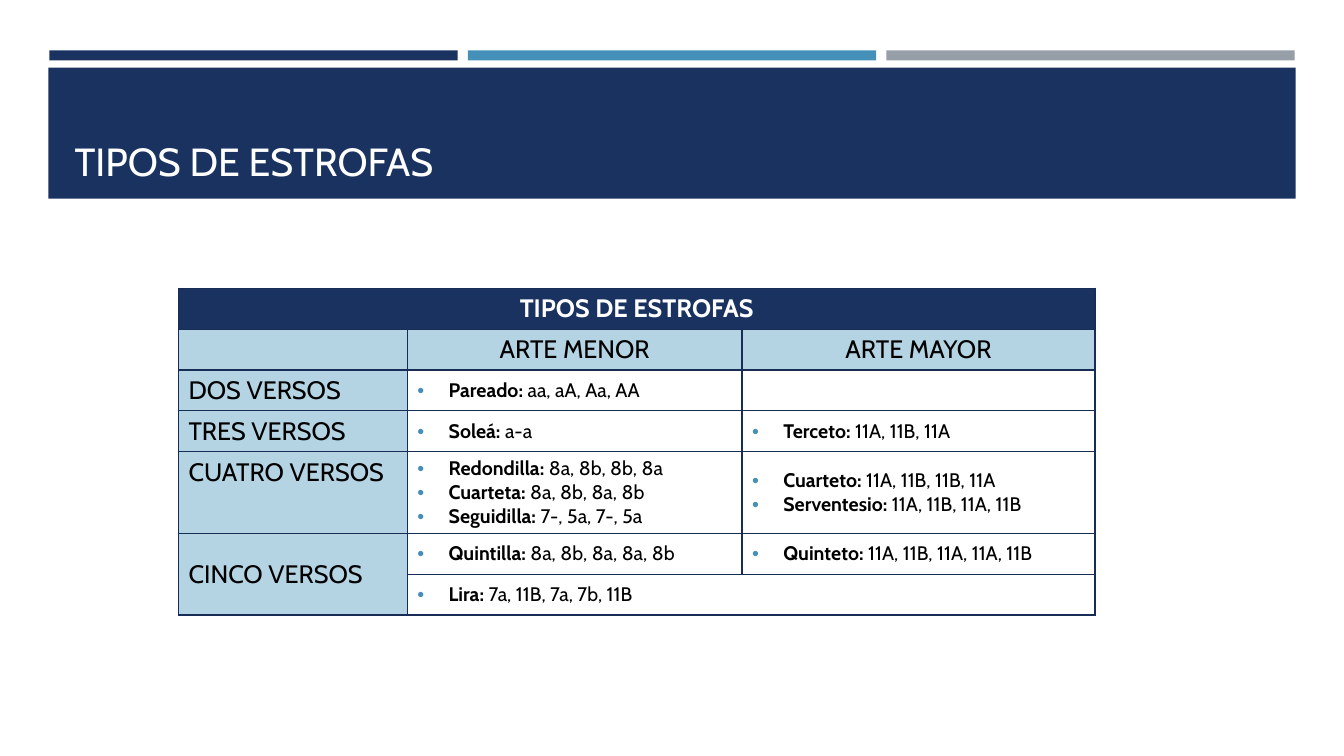
from dataclasses import dataclass

from lxml import etree
from pptx import Presentation
from pptx.dml.color import RGBColor
from pptx.enum import shapes, text
from pptx.oxml.ns import qn
from pptx.slide import Slide
from pptx.table import _Cell
from pptx.util import Inches, Pt


@dataclass(frozen=True)
class Theme:
    font: str = "Cabin"
    navy: str = "1A3260"
    blue: str = "4590B8"
    grey: str = "969FA7"
    pale: str = "B4D3E3"
    edge: str = "172D56"
    white: str = "FFFFFF"
    black: str = "000000"
    title: int = 28
    label: int = 18
    item: int = 14


@dataclass(frozen=True)
class Band:
    left: float
    top: float
    width: float
    height: float
    color: str


@dataclass(frozen=True)
class Stanza:
    name: str
    pattern: str


@dataclass(frozen=True)
class Entry:
    """A table cell: a centred or left label, or a list of stanzas."""
    row: int
    col: int
    label: str = ""
    stanzas: tuple[Stanza, ...] = ()
    fill: str = ""
    color: str = "000000"
    bold: bool = False
    centered: bool = False
    middle: bool = False
    row_span: int = 1
    col_span: int = 1


T = Theme()

BANDS = [
    *(Band(0.49 + 4.15 * i, 0.5, 4.05, 0.1, color)
      for i, color in enumerate((T.navy, T.blue, T.grey))),
    Band(0.48, 0.67, 12.37, 1.3, T.navy),
]

TABLE_LEFT, TABLE_TOP, TABLE_HEIGHT = 1.77, 2.86, 3.24
COLUMN_WIDTHS = (2.27, 3.32, 3.5)
ROW_UNITS = (1, 1, 1, 1, 2, 1, 1)


def heading(col: int, label: str) -> Entry:
    return Entry(1, col, label, fill=T.pale, centered=True)


def verses(row: int, label: str, row_span: int = 1) -> Entry:
    return Entry(row, 0, label, fill=T.pale, row_span=row_span, middle=row_span > 1)


def forms(row: int, col: int, *stanzas: Stanza, col_span: int = 1) -> Entry:
    return Entry(row, col, stanzas=stanzas, middle=True, col_span=col_span)


ENTRIES = [
    Entry(0, 0, "TIPOS DE ESTROFAS", fill=T.navy, color=T.white, bold=True,
          centered=True, col_span=3),
    heading(0, ""),
    heading(1, "ARTE MENOR"),
    heading(2, "ARTE MAYOR"),
    verses(2, "DOS VERSOS"),
    forms(2, 1, Stanza("Pareado:", "aa, aA, Aa, AA")),
    forms(2, 2),
    verses(3, "TRES VERSOS"),
    forms(3, 1, Stanza("Soleá:", "a-a")),
    forms(3, 2, Stanza("Terceto:", "11A, 11B, 11A")),
    verses(4, "CUATRO VERSOS"),
    forms(4, 1, Stanza("Redondilla:", "8a, 8b, 8b, 8a"),
          Stanza("Cuarteta:", "8a, 8b, 8a, 8b"),
          Stanza("Seguidilla:", "7-, 5a, 7-, 5a")),
    forms(4, 2, Stanza("Cuarteto:", "11A, 11B, 11B, 11A"),
          Stanza("Serventesio:", "11A, 11B, 11A, 11B")),
    verses(5, "CINCO VERSOS", row_span=2),
    forms(5, 1, Stanza("Quintilla:", "8a, 8b, 8a, 8a, 8b")),
    forms(5, 2, Stanza("Quinteto:", "11A, 11B, 11A, 11A, 11B")),
    forms(6, 1, Stanza("Lira:", "7a, 11B, 7a, 7b, 11B"), col_span=2),
]


def rgb(color: str) -> RGBColor:
    return RGBColor.from_string(color)


def add_run(p: text.PP_ALIGN, content: str, size: int, color: str, bold: bool = False) -> None:
    r = p.add_run()
    r.text = content
    r.font.name, r.font.size, r.font.bold = T.font, Pt(size), bold
    r.font.color.rgb = rgb(color)


def add_band(slide: Slide, band: Band) -> None:
    sp = slide.shapes.add_shape(
        shapes.MSO_SHAPE.RECTANGLE, Inches(band.left), Inches(band.top),
        Inches(band.width), Inches(band.height))
    sp.shadow.inherit = False
    sp.fill.solid()
    sp.fill.fore_color.rgb = rgb(band.color)
    sp.line.fill.background()


def add_title(slide: Slide, content: str) -> None:
    sp = slide.shapes.title
    sp.left, sp.top, sp.width, sp.height = map(Inches, (0.64, 0.77, 12.06, 1.11))
    tf = sp.text_frame
    tf.auto_size = text.MSO_AUTO_SIZE.NONE
    tf.vertical_anchor = text.MSO_ANCHOR.BOTTOM
    p = tf.paragraphs[0]
    p.alignment = text.PP_ALIGN.LEFT
    add_run(p, content, T.title, T.white)
    slide.shapes._spTree.append(sp._element)  # in front of the bands


def set_borders(cell: _Cell) -> None:
    """Outline the cell; lines must come before the fill in tcPr."""
    tc_pr = cell._tc.get_or_add_tcPr()
    for i, side in enumerate(("lnL", "lnR", "lnT", "lnB")):
        ln = etree.Element(qn(f"a:{side}"), w=str(Pt(1)))
        fill = etree.SubElement(ln, qn("a:solidFill"))
        etree.SubElement(fill, qn("a:srgbClr"), val=T.edge)
        tc_pr.insert(i, ln)


def set_bullet(p: text.PP_ALIGN) -> None:
    p_pr = p._p.get_or_add_pPr()
    p_pr.set("marL", str(Inches(0.31)))
    p_pr.set("indent", str(-Inches(0.31)))
    color = etree.SubElement(p_pr, qn("a:buClr"))
    etree.SubElement(color, qn("a:srgbClr"), val=T.blue)
    etree.SubElement(p_pr, qn("a:buFont"), typeface="Arial")
    etree.SubElement(p_pr, qn("a:buChar"), char="•")


def fill_cell(cell: _Cell, entry: Entry) -> None:
    if entry.fill:
        cell.fill.solid()
        cell.fill.fore_color.rgb = rgb(entry.fill)
    cell.vertical_anchor = text.MSO_ANCHOR.MIDDLE if entry.middle else text.MSO_ANCHOR.TOP
    tf = cell.text_frame
    p = tf.paragraphs[0]
    if entry.label:
        p.alignment = text.PP_ALIGN.CENTER if entry.centered else text.PP_ALIGN.LEFT
        add_run(p, entry.label, T.label, entry.color, entry.bold)
    for i, stanza in enumerate(entry.stanzas):
        p = tf.add_paragraph() if i else p
        set_bullet(p)
        add_run(p, stanza.name, T.item, T.black, bold=True)
        add_run(p, f" {stanza.pattern}", T.item, T.black)


def add_stanza_table(slide: Slide) -> None:
    table = slide.shapes.add_table(
        len(ROW_UNITS), len(COLUMN_WIDTHS), Inches(TABLE_LEFT), Inches(TABLE_TOP),
        Inches(sum(COLUMN_WIDTHS)), Inches(TABLE_HEIGHT)).table
    table.first_row = table.horz_banding = False
    for column, width in zip(table.columns, COLUMN_WIDTHS):
        column.width = Inches(width)
    for row, units in zip(table.rows, ROW_UNITS):
        row.height = Inches(TABLE_HEIGHT * units / sum(ROW_UNITS))
    for cell in table.iter_cells():
        cell.fill.background()
        set_borders(cell)
    for entry in ENTRIES:
        cell = table.cell(entry.row, entry.col)
        if entry.row_span * entry.col_span > 1:
            cell.merge(table.cell(entry.row + entry.row_span - 1,
                                  entry.col + entry.col_span - 1))
        fill_cell(cell, entry)


def main() -> None:
    prs = Presentation()
    prs.slide_width, prs.slide_height = Inches(13.33), Inches(7.5)
    slide = prs.slides.add_slide(prs.slide_layouts[5])
    for band in BANDS:
        add_band(slide, band)
    add_title(slide, "TIPOS DE ESTROFAS")
    add_stanza_table(slide)
    prs.save("out.pptx")


if __name__ == "__main__":
    main()
